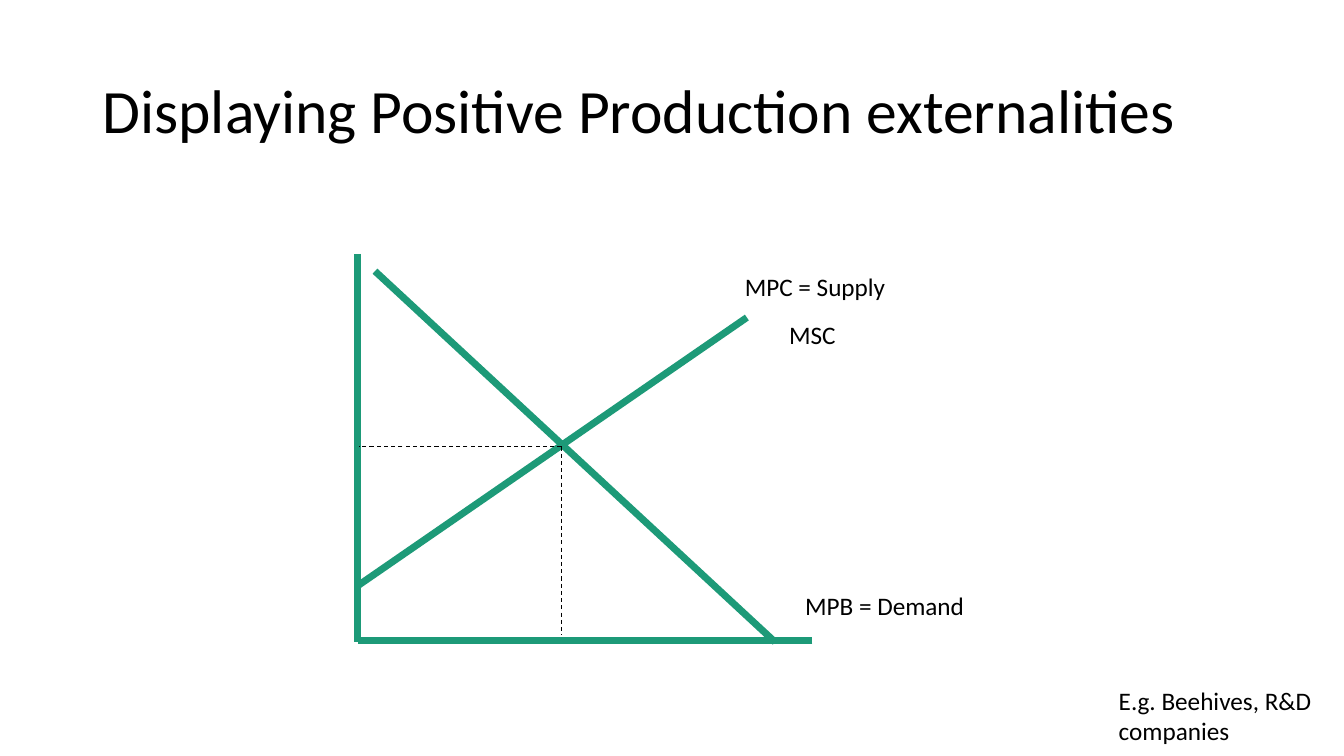
import dataclasses

import pptx
import pptx.dml.color
import pptx.enum.dml
import pptx.enum.shapes
import pptx.enum.text
import pptx.oxml
import pptx.util


@dataclasses.dataclass(frozen=True)
class Theme:
    font: str = "Calibri"
    ink: str = "000000"
    curve: str = "1D9A78"
    paper: str = "FFFFFF"
    title_size: float = 44
    label_size: float = 18
    curve_width: float = 5
    guide_width: float = 0.75


class Diagram:
    """Draws on one slide; all lengths are percentages of its width and height."""

    def __init__(self, deck, theme):
        self.theme = theme
        self.column = deck.slide_width / 100
        self.row = deck.slide_height / 100
        self.page = deck.slides.add_slide(deck.slide_layouts.get_by_name("Title Only"))
        self.page.background.fill.solid()
        self.page.background.fill.fore_color.rgb = self.color(theme.paper)

    @staticmethod
    def color(value):
        return pptx.dml.color.RGBColor.from_string(value)

    def place(self, *lengths):
        """Turn alternating horizontal and vertical percentages into EMU."""
        return [round(length * (self.row if index % 2 else self.column))
                for index, length in enumerate(lengths)]

    def set_text(self, frame, text, *, size, spacing=None,
                 anchor=pptx.enum.text.MSO_ANCHOR.TOP):
        frame.word_wrap = True
        frame.vertical_anchor = anchor
        para = frame.paragraphs[0]
        para.alignment = pptx.enum.text.PP_ALIGN.LEFT
        para.line_spacing = spacing
        span = para.add_run()
        span.text = text
        span.font.name = self.theme.font
        span.font.size = pptx.util.Pt(size)
        span.font.color.rgb = self.color(self.theme.ink)

    def title(self, text, *bounds):
        box = self.page.shapes.title
        box.left, box.top, box.width, box.height = self.place(*bounds)
        self.set_text(box.text_frame, text, size=self.theme.title_size, spacing=0.9,
                      anchor=pptx.enum.text.MSO_ANCHOR.MIDDLE)

    def label(self, text, left, top, width=13.58, height=5.33):
        box = self.page.shapes.add_textbox(*self.place(left, top, width, height))
        self.set_text(box.text_frame, text, size=self.theme.label_size)
        box.text_frame.auto_size = pptx.enum.text.MSO_AUTO_SIZE.SHAPE_TO_FIT_TEXT

    def line(self, start, end, *, color, width, dash=None):
        connector = self.page.shapes.add_connector(
            pptx.enum.shapes.MSO_CONNECTOR.STRAIGHT, *self.place(*start, *end))
        connector.line.color.rgb = self.color(color)
        connector.line.width = pptx.util.Pt(width)
        connector.line.dash_style = dash
        properties = connector.element.spPr
        properties.append(pptx.oxml.parse_xml(
            '<a:effectLst xmlns:a="http://schemas.openxmlformats.org/drawingml/2006/main"/>'))

    def curve(self, start, end):
        self.line(start, end, color=self.theme.curve, width=self.theme.curve_width)

    def guide(self, start, end):
        self.line(start, end, color=self.theme.ink, width=self.theme.guide_width,
                  dash=pptx.enum.dml.MSO_LINE.DASH)


def main():
    deck = pptx.Presentation()
    deck.slide_width = pptx.util.Inches(13.33)
    deck.slide_height = pptx.util.Inches(7.5)
    diagram = Diagram(deck, Theme())

    diagram.title("Displaying Positive Production externalities",
                  6.88, 5.33, 86.25, 19.33)

    axis_left, axis_bottom = 26.63, 84.67
    curves = {
        "price axis": ((axis_left, 33.6), (axis_left, 84.93)),
        "quantity axis": ((60.45, axis_bottom), (axis_left, axis_bottom)),
        "supply": ((55.57, 42), (axis_left, 77.47)),
        "demand": ((27.9, 35.87), (57.67, 84.93)),
    }
    for start, end in curves.values():
        diagram.curve(start, end)

    diagram.label("MPC = Supply", 54.68, 35.2)
    diagram.label("MPB = Demand", 59.17, 77.47)
    diagram.label("E.g. Beehives, R&D companies", 82.5, 90, 17.5, 9.47)
    diagram.label("MSC", 57.98, 41.6)

    equilibrium = (41.77, 59.05)
    diagram.guide(equilibrium, (equilibrium[0], 84))
    diagram.guide(equilibrium, (26.7, equilibrium[1]))

    deck.save("out.pptx")


if __name__ == "__main__":
    main()
